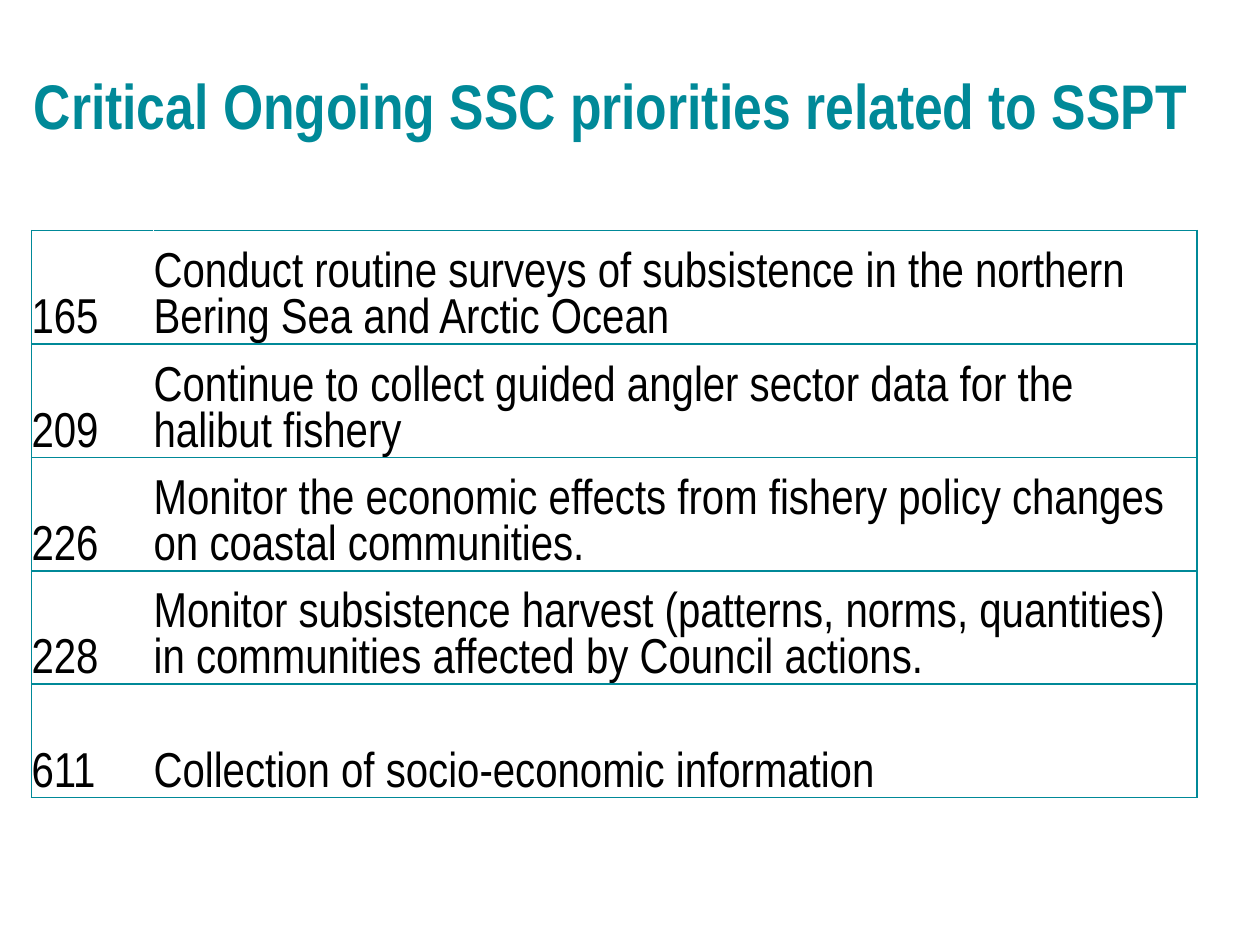
from pptx import Presentation
from pptx.dml.color import RGBColor
from pptx.enum.text import MSO_ANCHOR, PP_ALIGN
from pptx.oxml import parse_xml
from pptx.oxml.ns import nsdecls
from pptx.util import Pt

PX = 9144  # EMU per px, 100 px to the inch
FONT = "Arial Narrow"
TEAL = RGBColor(0x00, 0x89, 0x98)
BLACK = RGBColor(0x00, 0x00, 0x00)
WHITE = RGBColor(0xFF, 0xFF, 0xFF)

PRIORITIES = [
    ("165", "Conduct routine surveys of subsistence in the northern Bering Sea and Arctic Ocean"),
    ("209", "Continue to collect guided angler sector data for the halibut fishery"),
    ("226", "Monitor the economic effects from fishery policy changes on coastal communities."),
    ("228", "Monitor subsistence harvest (patterns, norms, quantities) in communities affected by Council actions."),
    ("611", "Collection of socio-economic information"),
]
COLUMN_WIDTHS = [97, 828]
ROW_HEIGHT = 90
# Border sides per column, in schema order
COLUMN_BORDERS = [("lnL", "lnT", "lnB"), ("lnR", "lnT", "lnB")]


def style_paragraph(para, size, color, bold=False):
    para.font.name = FONT
    para.font.size = Pt(size)
    para.font.bold = bold
    para.font.color.rgb = color


def add_border(cell, side, position):
    line = parse_xml(
        f'<a:{side} {nsdecls("a")} w="{Pt(1)}"><a:solidFill>'
        f'<a:srgbClr val="{TEAL}"/></a:solidFill></a:{side}>'
    )
    cell._tc.get_or_add_tcPr().insert(position, line)


deck = Presentation()
deck.slide_width = 1000 * PX
deck.slide_height = 750 * PX
page = deck.slides.add_slide(deck.slide_layouts[6])

# Title
title = page.shapes.add_textbox(17 * PX, 46 * PX, 942 * PX, 74 * PX)
frame = title.text_frame
frame.word_wrap = True
frame.vertical_anchor = MSO_ANCHOR.MIDDLE
para = frame.paragraphs[0]
para.text = "Critical Ongoing SSC priorities related to SSPT"
para.alignment = PP_ALIGN.LEFT
style_paragraph(para, 36, TEAL, bold=True)

# Priorities table
table = page.shapes.add_table(
    len(PRIORITIES), len(COLUMN_WIDTHS), 25 * PX, 183 * PX,
    sum(COLUMN_WIDTHS) * PX, len(PRIORITIES) * ROW_HEIGHT * PX,
).table
table.first_row = False
table.horz_banding = False
for column, width in zip(table.columns, COLUMN_WIDTHS):
    column.width = width * PX

for row, texts in zip(table.rows, PRIORITIES):
    row.height = ROW_HEIGHT * PX
    for cell, text, sides in zip(row.cells, texts, COLUMN_BORDERS):
        cell.text = text
        cell.vertical_anchor = MSO_ANCHOR.BOTTOM
        cell.margin_left = cell.margin_right = 0
        cell.margin_top = cell.margin_bottom = 0
        cell.fill.solid()
        cell.fill.fore_color.rgb = WHITE
        para = cell.text_frame.paragraphs[0]
        para.line_spacing = Pt(26.3)
        style_paragraph(para, 28, BLACK)
        for position, side in enumerate(sides):
            add_border(cell, side, position)

deck.save("out.pptx")
